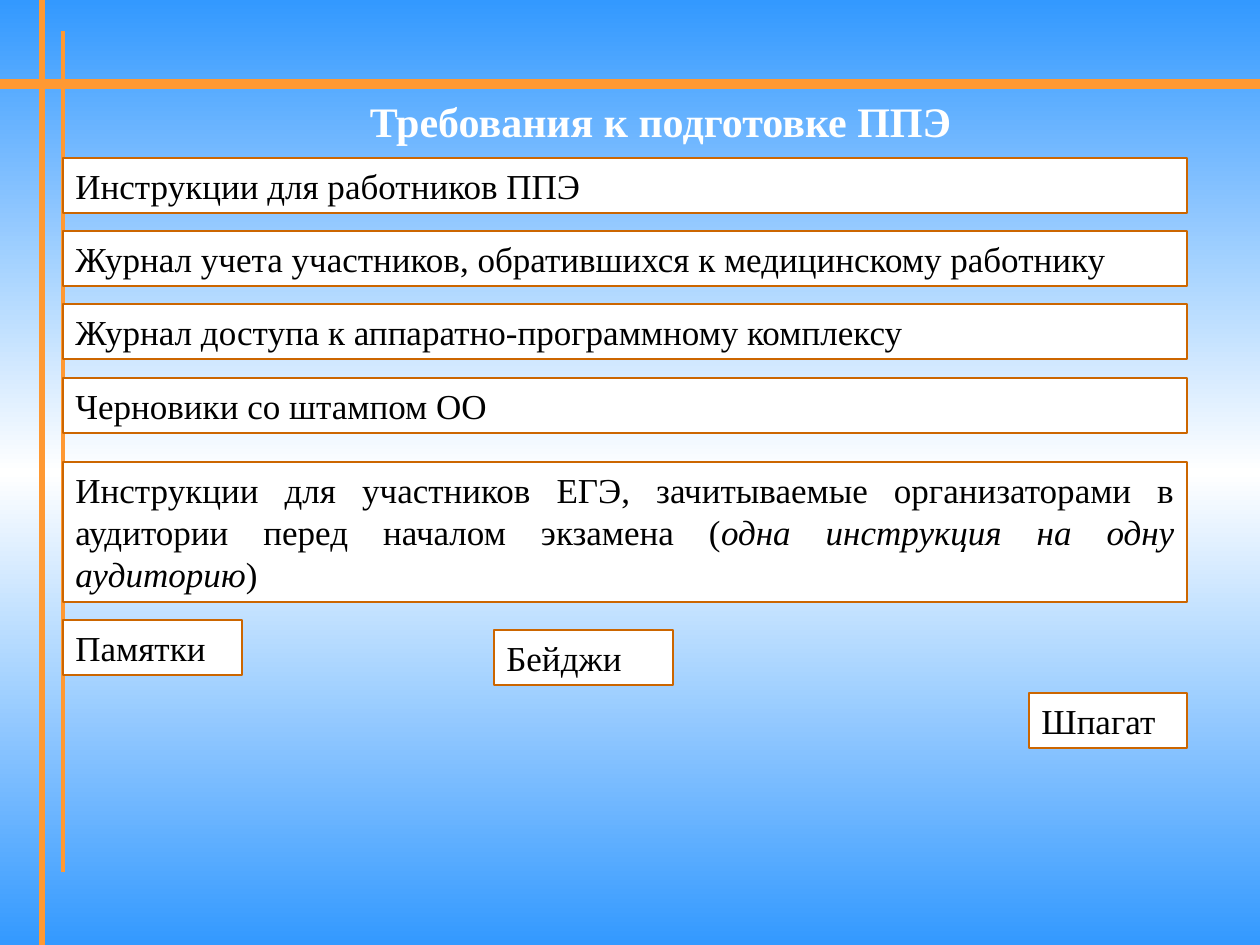
import copy

import pptx
import pptx.dml.color
import pptx.enum.shapes
import pptx.enum.text
import pptx.oxml.ns
import pptx.util
from lxml import etree

ALIGN = pptx.enum.text.PP_ALIGN
ANCHOR = pptx.enum.text.MSO_ANCHOR
QN = pptx.oxml.ns.qn
WIDTH, HEIGHT = 1260, 945
LEFT, BAR_WIDTH, BAR_HEIGHT = 63, 1124, 55
BLUE, WHITE, ORANGE, BROWN, BLACK = "3399FF", "FFFFFF", "FF9933", "CC6600", "000000"

BARS = [
    ("Инструкции для работников ППЭ", ALIGN.JUSTIFY),
    ("Журнал учета участников, обратившихся к медицинскому работнику", ALIGN.JUSTIFY),
    ("Журнал доступа к аппаратно-программному комплексу", ALIGN.LEFT),
    ("Черновики со штампом ОО", ALIGN.JUSTIFY),
]
INSTRUCTIONS = [
    ("Инструкции для участников ЕГЭ, зачитываемые организаторами в аудитории "
     "перед началом экзамена (", {}),
    ("одна инструкция на одну аудиторию", {"italic": True}),
    (")", {}),
]
SUPPLIES = [
    ("Памятки", (LEFT, 620, 179, BAR_HEIGHT)),
    ("Бейджи", (494, 630, 179, BAR_HEIGHT)),
    ("Шпагат", (1029, 693, 158, BAR_HEIGHT)),
]


def px(*lengths):
    return [pptx.util.Emu(round(length * 914400 / 126)) for length in lengths]


def rgb(hex_code):
    return pptx.dml.color.RGBColor.from_string(hex_code)


def set_format(target, values):
    for attribute, value in values.items():
        setattr(target, attribute, value)


def write(paragraph, runs, size, color, **values):
    for words, emphasis in runs:
        run = paragraph.add_run()
        run.text = words
        run.font.color.rgb = rgb(color)
        set_format(run.font, {"name": "Times New Roman", "size": pptx.util.Pt(size),
                              **values, **emphasis})


def paint_background(slide):
    """Fill the slide from blue through white to blue, top to bottom."""
    fill = slide.background.fill
    fill.gradient()
    fill.gradient_angle = 270
    for stop in fill.gradient_stops:
        stop.color.rgb = rgb(BLUE)
    first = slide.element.find(".//" + QN("a:gs"))
    first.addnext(copy.deepcopy(first))
    for stop, position, color in zip(fill.gradient_stops, (0, 0.5, 1), (BLUE, WHITE, BLUE)):
        stop.position = position
        stop.color.rgb = rgb(color)


def draw_rules(slide):
    rules = [
        ((0, 84, WIDTH, 84), 6),
        ((42, 0, 42, HEIGHT), 3),
        ((LEFT, 31, LEFT, 872), 2.25),
    ]
    for ends, weight in rules:
        rule = slide.shapes.add_connector(
            pptx.enum.shapes.MSO_CONNECTOR.STRAIGHT, *px(*ends))
        rule.line.color.rgb = rgb(ORANGE)
        rule.line.width = pptx.util.Pt(weight)
        etree.SubElement(rule.element.spPr, QN("a:effectLst"))


def add_title(slide, box):
    frame = slide.shapes.add_textbox(*px(*box)).text_frame
    set_format(frame, {"word_wrap": True, "vertical_anchor": ANCHOR.MIDDLE})
    heading = frame.paragraphs[0]
    heading.alignment = ALIGN.CENTER
    write(heading, [("Требования к подготовке ППЭ", {})], 24, WHITE, bold=True)


def add_item(slide, box, runs, alignment=ALIGN.JUSTIFY):
    """Place one outlined requirement with its wording."""
    item = slide.shapes.add_shape(pptx.enum.shapes.MSO_SHAPE.RECTANGLE, *px(*box))
    item.shadow.inherit = False
    item.fill.solid()
    item.fill.fore_color.rgb = rgb(WHITE)
    item.line.color.rgb = rgb(BROWN)
    item.line.width = pptx.util.Pt(0.75)
    set_format(item.text_frame, {
        "word_wrap": True,
        "vertical_anchor": ANCHOR.TOP,
        "auto_size": pptx.enum.text.MSO_AUTO_SIZE.SHAPE_TO_FIT_TEXT,
    })
    paragraph = item.text_frame.paragraphs[0]
    paragraph.alignment = alignment
    write(paragraph, runs, 20, BLACK)


def add_bars(slide, box):
    """Spread the one-line requirements evenly down the box."""
    left, top, width, height = box
    for index, (words, alignment) in enumerate(BARS):
        offset = (height - BAR_HEIGHT) * index // (len(BARS) - 1)
        add_item(slide, (left, top + offset, width, BAR_HEIGHT), [(words, {})], alignment)


def main():
    deck = pptx.Presentation()
    deck.slide_width, deck.slide_height = px(WIDTH, HEIGHT)
    slide = deck.slides.add_slide(deck.slide_layouts[6])
    paint_background(slide)
    draw_rules(slide)
    add_title(slide, (83, 105, 1155, 32))
    add_bars(slide, (LEFT, 158, BAR_WIDTH, 275))
    add_item(slide, (LEFT, 462, BAR_WIDTH, 140), INSTRUCTIONS)
    for words, box in SUPPLIES:
        add_item(slide, box, [(words, {})])
    deck.save("out.pptx")


if __name__ == "__main__":
    main()
